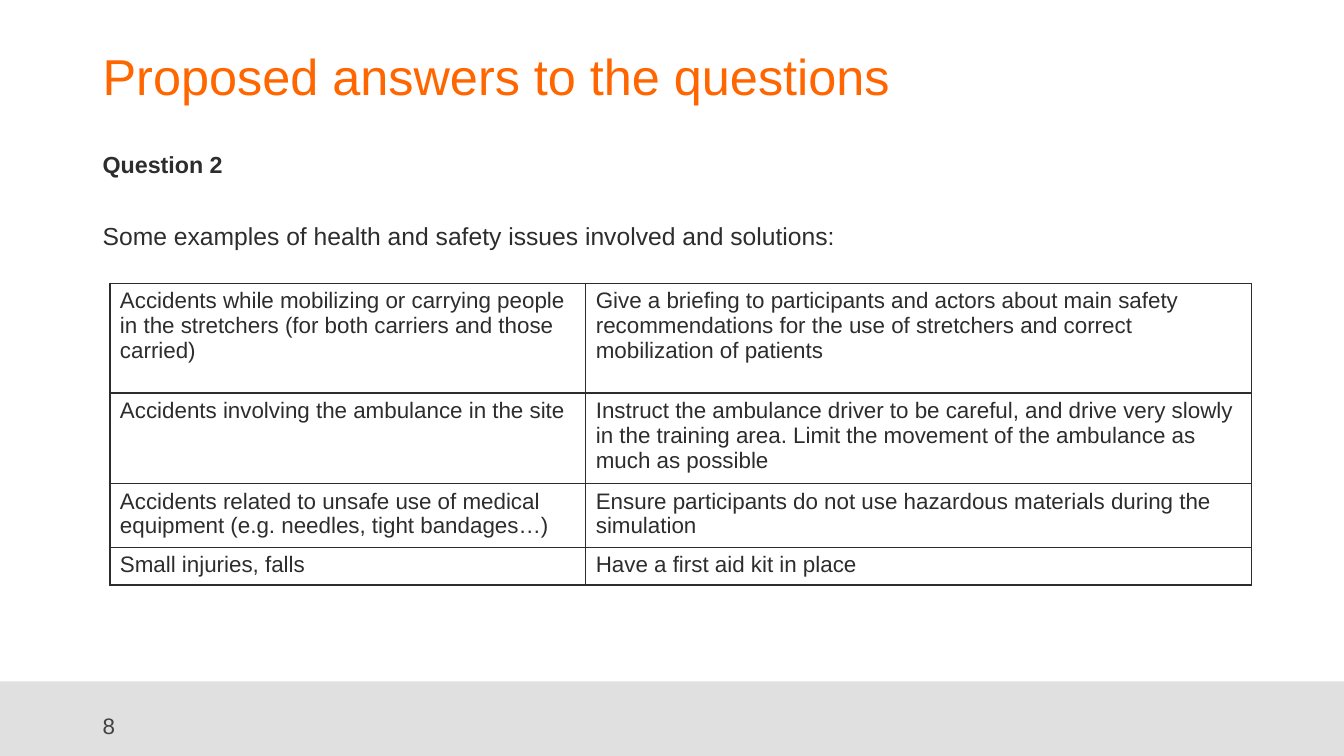
import pptx
import pptx.util
import pptx.dml.color
import pptx.enum.shapes
import pptx.enum.text
import lxml.etree

Inches, Pt = pptx.util.Inches, pptx.util.Pt
ANCHOR = pptx.enum.text.MSO_ANCHOR
COLORS = {"title": "FF6600", "text": "2D2D2D", "number": "424242",
          "band": "E0E0E0", "cell": "FFFFFF"}


def style(par, size, color, bold=False):
    for run in par.runs:
        run.font.name = "Arial"
        run.font.size = Pt(size)
        run.font.bold = bold
        run.font.color.rgb = pptx.dml.color.RGBColor.from_string(COLORS[color])


def add_text(left, top, width, height, text, anchor):
    """Add a wrapping text box and return its paragraphs."""
    box = slide.shapes.add_textbox(Inches(left), Inches(top), Inches(width), Inches(height))
    frame = box.text_frame
    frame.word_wrap = True
    frame.vertical_anchor = anchor
    frame.text = text
    return frame.paragraphs


deck = pptx.Presentation()
deck.slide_width, deck.slide_height = Inches(13.33), Inches(7.5)
slide = deck.slides.add_slide(deck.slide_layouts[6])

# Footer band
band = slide.shapes.add_shape(pptx.enum.shapes.MSO_SHAPE.RECTANGLE,
                              0, Inches(6.76), deck.slide_width, Inches(0.74))
band.shadow.inherit = False
band.fill.solid()
band.fill.fore_color.rgb = pptx.dml.color.RGBColor.from_string(COLORS["band"])
band.line.fill.background()

# Title, introduction and slide number
title = add_text(0.92, 0.06, 11.5, 1.45, "Proposed answers to the questions", ANCHOR.MIDDLE)[0]
title.line_spacing = 0.9
style(title, 36, "title")

head, intro = add_text(
    0.92, 1.49, 11.5, 1.09,
    "Question 2\nSome examples of health and safety issues involved and solutions:", ANCHOR.TOP)
head.line_spacing = intro.line_spacing = 0.8
intro.space_before = Pt(35.3)
style(head, 16.6, "text", bold=True)
style(intro, 17.6, "text")

number = add_text(0.92, 7, 3, 0.4, "8", ANCHOR.MIDDLE)[0]
style(number, 16, "number")

# Issues and solutions
ROWS = [
    (1.09, "Accidents while mobilizing or carrying people in the stretchers "
           "(for both carriers and those carried)",
     "Give a briefing to participants and actors about main safety recommendations "
     "for the use of stretchers and correct mobilization of patients"),
    (0.84, "Accidents involving the ambulance in the site",
     "Instruct the ambulance driver to be careful, and drive very slowly in the "
     "training area. Limit the movement of the ambulance as much as possible"),
    (0.59, "Accidents related to unsafe use of medical equipment "
           "(e.g. needles, tight bandages…)",
     "Ensure participants do not use hazardous materials during the simulation"),
    (0.37, "Small injuries, falls", "Have a first aid kit in place"),
]
WIDTHS = [4.72, 6.6]
total = sum(row[0] for row in ROWS)
table = slide.shapes.add_table(len(ROWS), len(WIDTHS), Inches(1.09), Inches(2.81),
                               Inches(sum(WIDTHS)), Inches(total)).table
table.first_row = table.horz_banding = False
for col, width in zip(table.columns, WIDTHS):
    col.width = Inches(width)

NS = "http://schemas.openxmlformats.org/drawingml/2006/main"
for r, (height, *texts) in enumerate(ROWS):
    table.rows[r].height = Inches(height)
    for c, text in enumerate(texts):
        cell = table.cell(r, c)
        cell.text_frame.text = text
        style(cell.text_frame.paragraphs[0], 16, "text")
        props = cell._tc.get_or_add_tcPr()
        for side in ("lnL", "lnR", "lnT", "lnB"):
            line = lxml.etree.SubElement(props, f"{{{NS}}}{side}", w=str(Pt(1)))
            fill = lxml.etree.SubElement(line, f"{{{NS}}}solidFill")
            lxml.etree.SubElement(fill, f"{{{NS}}}srgbClr", val=COLORS["text"])
        cell.fill.solid()
        cell.fill.fore_color.rgb = pptx.dml.color.RGBColor.from_string(COLORS["cell"])

deck.save("out.pptx")
